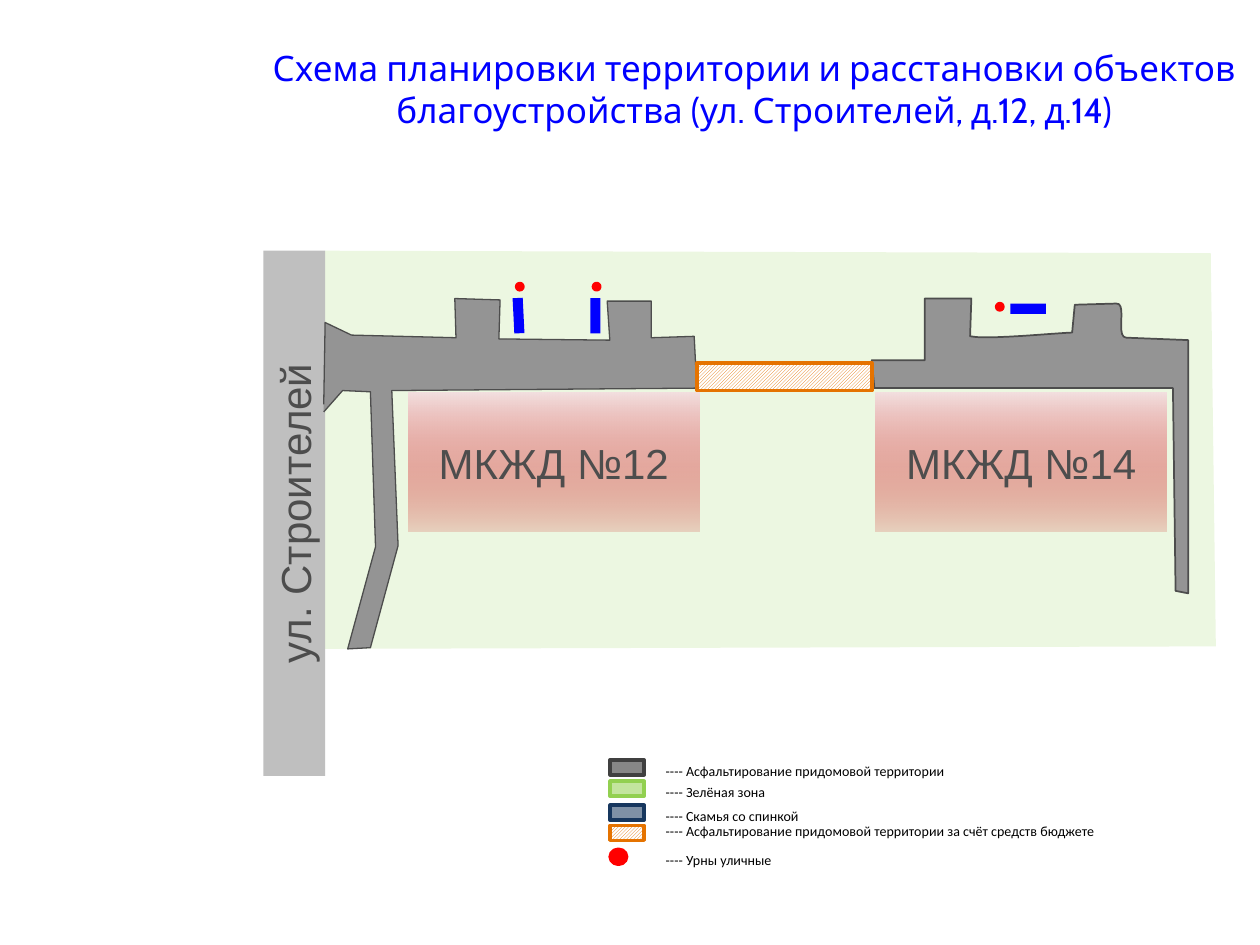
import pptx
import pptx.util
import pptx.dml.color
import pptx.enum.dml
import pptx.enum.shapes
import pptx.enum.text
import pptx.oxml
import pptx.oxml.ns

Pt = pptx.util.Pt
RGB = pptx.dml.color.RGBColor
KIND = pptx.enum.shapes.MSO_SHAPE
ALIGN = pptx.enum.text.PP_ALIGN
ANCHOR = pptx.enum.text.MSO_ANCHOR
HATCH = pptx.enum.dml.MSO_PATTERN.DARK_UPWARD_DIAGONAL

BLUE = RGB(0x00, 0x00, 0xFF)
RED = RGB(0xFF, 0x00, 0x00)
GREEN = RGB(0x92, 0xD0, 0x50)
NAVY = RGB(0x17, 0x37, 0x5E)
ORANGE = RGB(0xE5, 0x73, 0x00)
PINK = RGB(0xF3, 0xDF, 0xDF)
BRICK = RGB(0xCC, 0x00, 0x00)
ROAD = RGB(0x94, 0x94, 0x94)
STREET = RGB(0xBF, 0xBF, 0xBF)
DARK = RGB(0x4D, 0x4D, 0x4D)
COAL = RGB(0x26, 0x26, 0x26)
EDGE = RGB(0x40, 0x40, 0x40)
BLACK = RGB(0x00, 0x00, 0x00)
WHITE = RGB(0xFF, 0xFF, 0xFF)

TITLE = {"name": "Cabin", "size": Pt(20), "color": BLUE}
LABEL = {"name": "Arial", "size": Pt(24), "color": DARK}
NOTE = {"name": "Calibri", "size": Pt(8), "color": BLACK}


def curve(a, b, c, d, steps=10):
    """Points along a cubic curve from a to d, without a itself."""
    for i in range(1, steps + 1):
        t = i / steps
        u = 1 - t
        yield tuple(u**3 * p + 3 * u * u * t * q + 3 * u * t * t * r + t**3 * s
                    for p, q, r, s in zip(a, b, c, d))


class Plan:
    def __init__(self, slide):
        self.shapes = slide.shapes

    def fade(self, shape, part):
        """Give the last colour set on the shape an opacity in percent."""
        tone = list(shape._element.spPr.iter(pptx.oxml.ns.qn("a:srgbClr")))[-1]
        alpha = pptx.oxml.parse_xml(
            "<a:alpha %s val='%d'/>" % (pptx.oxml.ns.nsdecls("a"), part * 1000))
        tone.append(alpha)

    def paint(self, shape, fill, part=100, line=None, width=2):
        shape.shadow.inherit = False
        if fill == "hatch":
            shape.fill.patterned()
            shape.fill.pattern = HATCH
            shape.fill.fore_color.rgb = ORANGE
            shape.fill.back_color.rgb = WHITE
        elif fill == "blend":
            shape.fill.gradient()
            shape.fill.gradient_angle = 270
            for stop, tone in zip(shape.fill.gradient_stops, (PINK, BRICK)):
                stop.color.rgb = tone
        else:
            shape.fill.solid()
            shape.fill.fore_color.rgb = fill
        if part < 100:
            self.fade(shape, part)
        if line is None:
            shape.line.fill.background()
        else:
            shape.line.color.rgb = line
            shape.line.width = Pt(width)

    def shape(self, kind, box, fill, turn=0, **look):
        item = self.shapes.add_shape(kind, *map(Pt, box))
        item.rotation = turn
        self.paint(item, fill, **look)
        return item

    def area(self, points, fill, close=True, **look):
        first, *rest = [(Pt(x), Pt(y)) for x, y in points]
        pen = self.shapes.build_freeform(*first, scale=1.0)
        pen.add_line_segments(rest, close=close)
        self.paint(pen.convert_to_shape(), fill, **look)

    def text(self, item, words, style, frame, para):
        body = item.text_frame
        for key, value in frame.items():
            setattr(body, key, value)
        line = body.paragraphs[0]
        for key, value in para.items():
            setattr(line, key, value)
        run = line.add_run()
        run.text = words
        for key, value in style.items():
            if key == "color":
                run.font.color.rgb = value
            else:
                setattr(run.font, key, value)

    def label(self, item, words):
        self.text(item, words, LABEL,
                  {"word_wrap": False, "vertical_anchor": ANCHOR.MIDDLE},
                  {"alignment": ALIGN.CENTER})

    def title(self, box, words):
        item = self.shapes.add_textbox(*map(Pt, box))
        self.text(item, words, TITLE,
                  {"word_wrap": True, "vertical_anchor": ANCHOR.MIDDLE},
                  {"alignment": ALIGN.CENTER})

    def note(self, box, words):
        item = self.shapes.add_textbox(*map(Pt, box))
        frame = {"margin_" + side: 0 for side in ("left", "top", "right", "bottom")}
        self.text(item, words, NOTE, {"word_wrap": True, **frame},
                  {"line_spacing": 1.15, "space_after": Pt(10)})

    def bin(self, x, y, turn=0):
        self.shape(KIND.OVAL, (x, y, 3.6, 3.6), RED, turn, line=RED)

    def bench(self, x, y, turn=0):
        self.shape(KIND.RECTANGLE, (x, y, 20.2, 5.8), BLUE, turn)


def main():
    deck = pptx.Presentation()
    deck.slide_width, deck.slide_height = Pt(720), Pt(540)
    plan = Plan(deck.slides.add_slide(deck.slide_layouts[6]))

    plan.title((144.7, 20.9, 572.4, 59), "Схема планировки территории и расстановки "
               "объектов благоустройства (ул. Строителей, д.12, д.14)")

    # Green zone
    plan.area([(185.8, 143.3), (691.9, 144.7), (694.8, 369.4), (185.8, 370.8)],
              GREEN, part=17)

    # Road by house 14
    plan.area([(498.2, 205.9), (528.5, 205.9), (528.5, 170.6), (555.1, 170.6),
               (554.4, 192.2),
               *curve((554.4, 192.2), (563, 194.4), (606.2, 190.1), (612.7, 190.1)),
               (614.2, 174.2), (637.9, 173.5),
               *curve((637.9, 173.5), (644.4, 172.8), (637.2, 193), (643.7, 193)),
               (679, 194.4), (679, 339.1), (671.8, 337.7), (670.3, 221.8),
               (499.7, 221.8)], ROAD, line=DARK, width=1)
    plan.bin(569.5, 173.5)
    plan.bench(577.4, 173.5)

    # Legend
    rows = [(434.2, 434.2, COAL, 55, EDGE, "Асфальтирование придомовой территории"),
            (446.4, 446.4, GREEN, 55, GREEN, "Зелёная зона"),
            (460.1, 460.1, NAVY, 55, NAVY, "Скамья со спинкой"),
            (471.6, 468.7, "hatch", 100, ORANGE,
             "Асфальтирование придомовой территории за счёт средств бюджете"),
            (485.3, 485.3, RED, 100, RED, "Урны уличные")]
    for top, base, fill, part, line, words in rows:
        kind, wide = (KIND.OVAL, 9.4) if fill == RED else (KIND.RECTANGLE, 19.4)
        plan.shape(kind, (348.7, top, wide, 8.6), fill, part=part, line=line)
        plan.note((380.4, base, 274.3, 8.6), "---- " + words)

    # Houses and street
    for left, name in ((233.3, "МКЖД №12"), (500.4, "МКЖД №14")):
        house = plan.shape(KIND.RECTANGLE, (left, 224.6, 166.3, 79.2), "blend", part=15)
        plan.label(house, name)
    street = plan.shape(KIND.RECTANGLE, (150.5, 143.3, 35.3, 300.2), STREET)
    plan.label(street, "ул. Строителей")
    street.text_frame._txBody.bodyPr.set("vert", "vert270")

    # Road by house 12
    plan.area([(185, 235.4), (195.8, 223.2), (211.7, 223.9), (214.6, 312.5),
               (198.7, 370.8), (211.7, 370.1), (227.5, 311.8), (223.9, 223.2),
               (398.2, 221.8), (396.7, 192.2), (372.2, 193), (372.2, 172.1),
               (347, 172.1), (348.5, 194.4), (285.1, 193.7), (285.8, 171.4),
               (259.9, 170.6), (260.6, 193), (200.9, 191.5), (185.8, 184.3),
               (185, 231.1)], ROAD, close=False, line=DARK, width=0.75)
    for x, turn in ((339.1, 90), (295.2, 87.2)):
        plan.bin(x, 162, turn)
        plan.bench(x - 9, 177.5, turn)

    # Link paid from the budget
    plan.shape(KIND.RECTANGLE, (398.2, 207.4, 100, 15.8), "hatch", line=ORANGE)

    deck.save("out.pptx")


if __name__ == "__main__":
    main()
